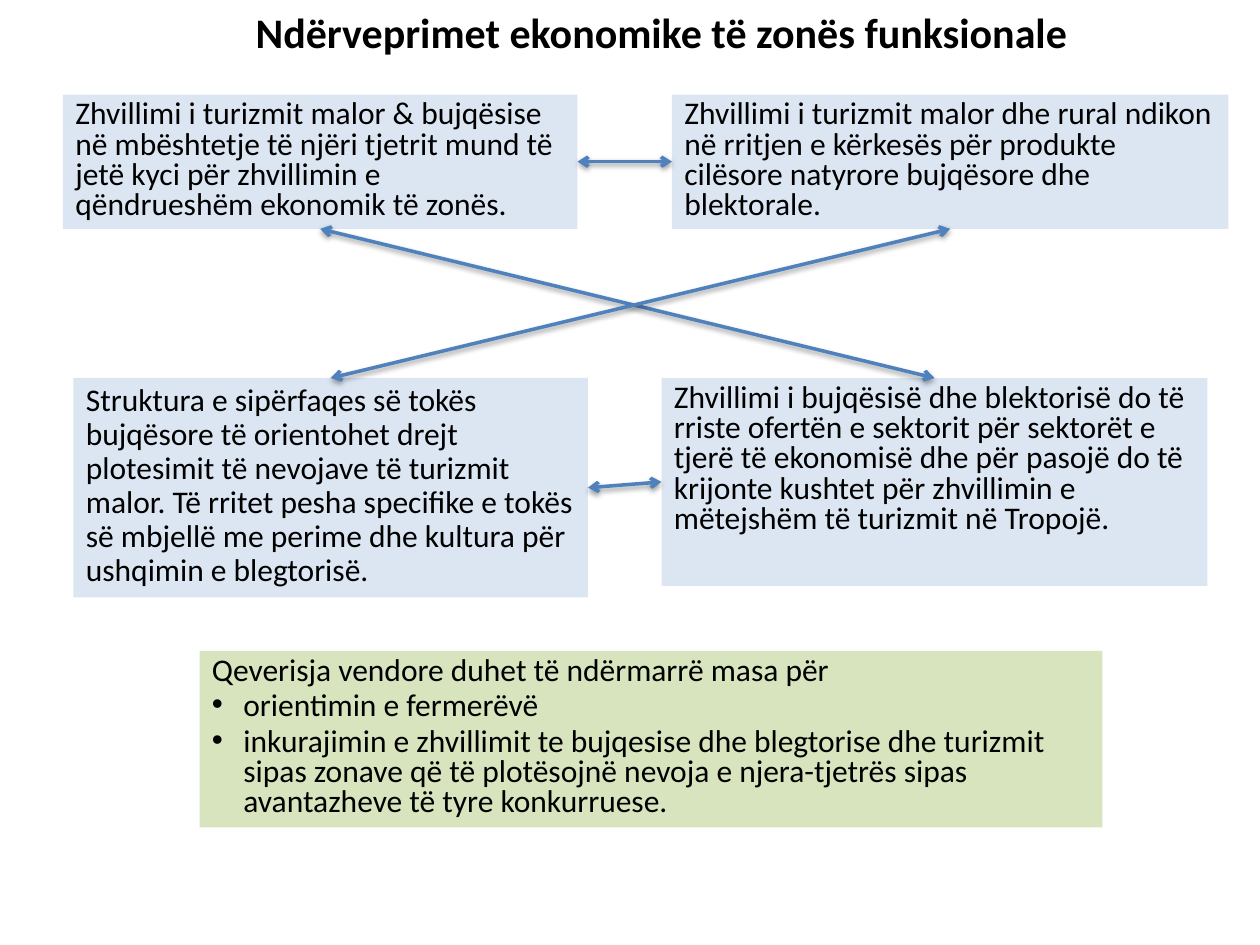
from dataclasses import dataclass

from lxml.etree import SubElement
from pptx import Presentation
from pptx.dml.color import RGBColor
from pptx.enum.shapes import MSO_CONNECTOR, MSO_SHAPE
from pptx.enum.text import MSO_ANCHOR, MSO_AUTO_SIZE, PP_ALIGN
from pptx.oxml.ns import qn
from pptx.util import Emu, Pt

PX = 7620  # EMU in one px, 120 px to the inch
TOP, LEFT, BOTTOM, RIGHT = range(4)


@dataclass(frozen=True)
class Theme:
    font: str = "Calibri"
    title_size: int = 24
    body_size: int = 18
    text: str = "000000"
    blue: str = "DCE6F2"
    green: str = "D7E4BD"
    arrow: str = "4F81BD"
    arrow_width: int = 2


THEME = Theme()


def px(length):
    return Emu(length * PX)


def color(value):
    return RGBColor.from_string(value)


def write(para, text, size=THEME.body_size, bold=False, align=PP_ALIGN.LEFT,
          spacing=None, before=0, bullet=False):
    """Fill one paragraph with formatted text."""
    para.alignment = align
    para.line_spacing = spacing
    para.space_before = Pt(before)
    if bullet:
        props = para._p.get_or_add_pPr()
        props.set("marL", str(px(30)))
        props.set("indent", str(px(-30)))
        SubElement(props, qn("a:buFont"), typeface="Arial")
        SubElement(props, qn("a:buChar"), char="•")
    span = para.add_run()
    span.text = text
    span.font.name = THEME.font
    span.font.size = Pt(size)
    span.font.bold = bold
    span.font.color.rgb = color(THEME.text)


def add_title(slide, box, text):
    frame = slide.shapes.add_textbox(*map(px, box)).text_frame
    frame.word_wrap = True
    frame.auto_size = MSO_AUTO_SIZE.SHAPE_TO_FIT_TEXT
    write(frame.paragraphs[0], text, size=THEME.title_size, bold=True,
          align=PP_ALIGN.CENTER)


def add_panel(slide, box, fill, lines, spacing=0.8, before=6):
    """Draw a filled rectangle; lines after the first are bulleted."""
    panel = slide.shapes.add_shape(MSO_SHAPE.RECTANGLE, *map(px, box))
    panel.shadow.inherit = False
    panel.fill.solid()
    panel.fill.fore_color.rgb = color(fill)
    panel.line.fill.background()
    frame = panel.text_frame
    frame.word_wrap = True
    frame.vertical_anchor = MSO_ANCHOR.TOP
    frame.auto_size = MSO_AUTO_SIZE.SHAPE_TO_FIT_TEXT
    for index, text in enumerate(lines):
        para = frame.add_paragraph() if index else frame.paragraphs[0]
        write(para, text, spacing=spacing, before=before, bullet=index > 0)
    return panel


def add_arrow(slide, start, start_side, end, end_side):
    """Join two panels with a shadowed double-headed arrow."""
    arrow = slide.shapes.add_connector(MSO_CONNECTOR.STRAIGHT, 0, 0, 0, 0)
    arrow.begin_connect(start, start_side)
    arrow.end_connect(end, end_side)
    arrow.line.color.rgb = color(THEME.arrow)
    arrow.line.width = Pt(THEME.arrow_width)
    line = arrow.line._get_or_add_ln()
    for tip in ("a:headEnd", "a:tailEnd"):
        SubElement(line, qn(tip), type="arrow")
    effects = SubElement(arrow._element.spPr, qn("a:effectLst"))
    shadow = SubElement(effects, qn("a:outerShdw"), blurRad=str(Pt(3)),
                        dist=str(Pt(1.6)), dir="5400000", rotWithShape="0")
    tint = SubElement(shadow, qn("a:srgbClr"), val=THEME.text)
    SubElement(tint, qn("a:alpha"), val="38000")


def add_interactions(slide, left, top):
    """Place the four linked panels relative to the region's corner."""
    def panel(x, y, width, height, text, **form):
        return add_panel(slide, (left + x, top + y, width, height),
                         THEME.blue, [text], **form)

    mutual = panel(
        0, 0, 490, 128,
        "Zhvillimi i turizmit malor & bujqësise në mbështetje të njëri tjetrit "
        "mund të jetë kyci për zhvillimin e qëndrueshëm ekonomik të zonës.")
    tourism = panel(
        580, 0, 530, 128,
        "Zhvillimi i turizmit malor dhe rural ndikon në rritjen e kërkesës për "
        "produkte cilësore natyrore bujqësore dhe blektorale.")
    farming = panel(
        570, 270, 520, 198,
        "Zhvillimi i bujqësisë dhe blektorisë do të rriste ofertën e sektorit "
        "për sektorët e tjerë të ekonomisë dhe për pasojë do të krijonte "
        "kushtet për zhvillimin e mëtejshëm të turizmit në Tropojë.")
    land = panel(
        10, 270, 490, 209,
        "Struktura e sipërfaqes së tokës bujqësore të orientohet drejt "
        "plotesimit të nevojave të turizmit malor. Të rritet pesha specifike "
        "e tokës së mbjellë me perime dhe kultura për ushqimin e blegtorisë.",
        spacing=0.9, before=5)

    # Diagonal links, then the links within each row
    add_arrow(slide, mutual, BOTTOM, farming, TOP)
    add_arrow(slide, tourism, BOTTOM, land, TOP)
    add_arrow(slide, mutual, RIGHT, tourism, LEFT)
    add_arrow(slide, land, RIGHT, farming, LEFT)


def main():
    deck = Presentation()
    deck.slide_width, deck.slide_height = px(1200), px(900)
    slide = deck.slides.add_slide(deck.slide_layouts[6])

    # Title
    add_title(slide, (160, 0, 940, 60),
              "Ndërveprimet ekonomike të zonës funksionale")
    # Linked panels
    add_interactions(slide, 60, 90)
    # Measures for local government
    add_panel(slide, (190, 620, 860, 168), THEME.green, [
        "Qeverisja vendore duhet të ndërmarrë masa për",
        "orientimin e fermerëvë",
        "inkurajimin e zhvillimit te bujqesise dhe blegtorise dhe turizmit "
        "sipas zonave që të plotësojnë nevoja e njera-tjetrës sipas "
        "avantazheve të tyre konkurruese.",
    ], before=3)
    deck.save("out.pptx")


if __name__ == "__main__":
    main()
